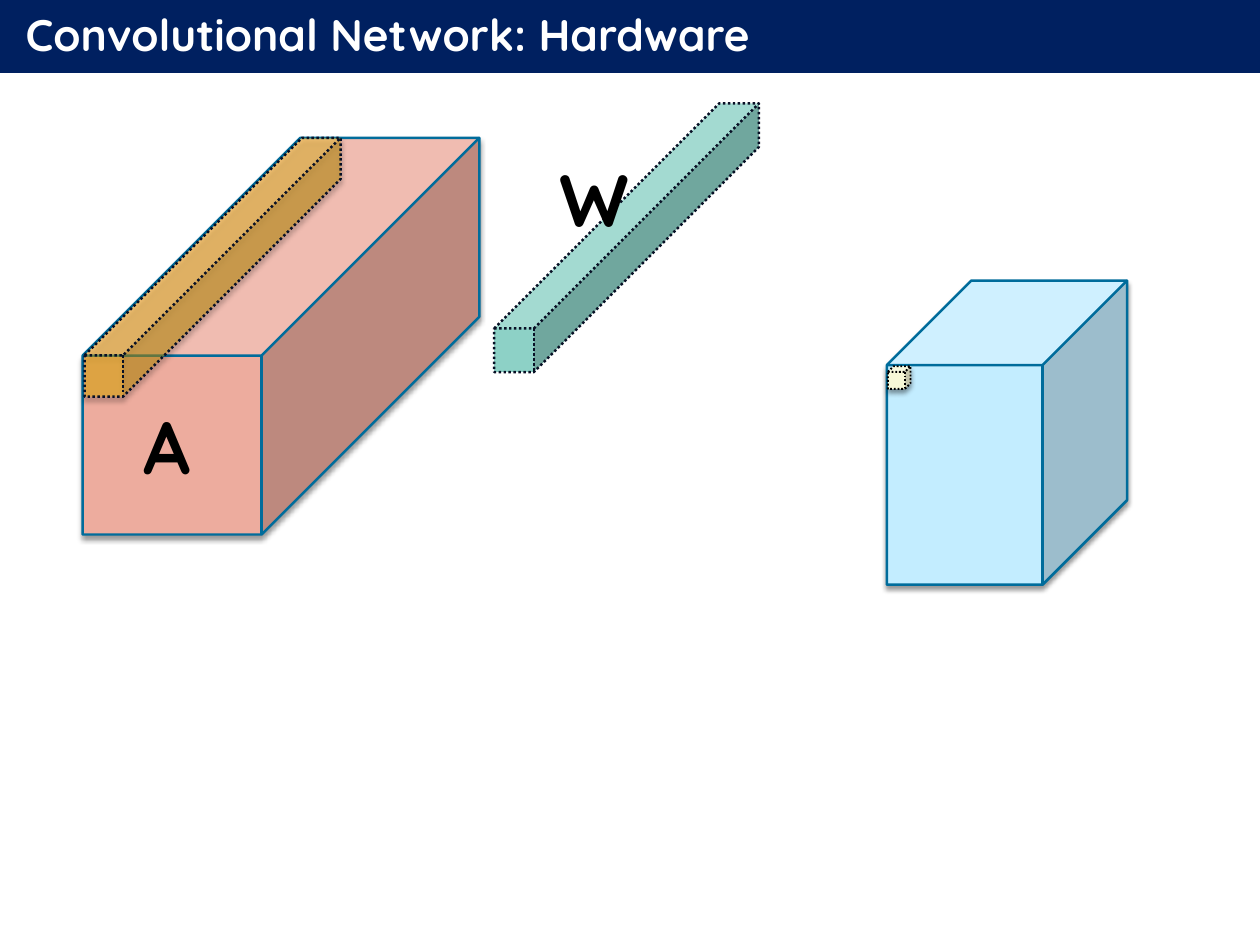
import lxml.etree
import pptx
import pptx.dml.color
import pptx.enum.dml
import pptx.enum.shapes
import pptx.enum.text
import pptx.oxml.ns
import pptx.util

RGB = pptx.dml.color.RGBColor
NAVY = RGB(0x00, 0x20, 0x60)
WHITE = RGB(0xFF, 0xFF, 0xFF)
BLACK = RGB(0x00, 0x00, 0x00)
SALMON = RGB(0xED, 0xAC, 0x9E)
SKY = RGB(0xC3, 0xED, 0xFF)
AMBER = RGB(0xFF, 0xC0, 0x00)
CREAM = RGB(0xF7, 0xF8, 0xD7)
TEAL = RGB(0x8D, 0xD1, 0xC6)
BLUE = RGB(0x00, 0x6C, 0x9B)
INK = RGB(0x08, 0x10, 0x25)

PX = 10160  # EMU per px, 90 px to the inch
SLIDE_SIZE = (1280, 960)
FONT = "Quicksand"

TITLE = "Convolutional Network: Hardware"
TITLE_BOX = (0, -5, 1280, 79)
TITLE_INDENT = 26

SOLID = pptx.enum.dml.MSO_LINE.SOLID
DOTTED = pptx.enum.dml.MSO_LINE.ROUND_DOT

# box, depth, fill, opacity in percent, line colour, line width, dash, shadow
CUBES = [
    ((84, 140, 403, 403), 0.549, SALMON, 100, BLUE, 2, SOLID, True),
    ((901, 285, 244, 309), 0.352, SKY, 100, BLUE, 2, SOLID, True),
    ((86, 140, 260, 263), 0.85, AMBER, 47, INK, 2, DOTTED, True),
    ((902, 372, 23, 23), 0.25, CREAM, 100, BLACK, 1.5, DOTTED, True),
    ((502, 105, 269, 273), 0.85, TEAL, 100, INK, 2, DOTTED, False),
]
LABELS = [
    ("A", (137, 403, 73, 100)),
    ("W", (560, 152, 90, 100)),
]


def emu(lengths):
    return [length * PX for length in lengths]


def add_child(parent, tag, **attributes):
    return lxml.etree.SubElement(parent, pptx.oxml.ns.qn(tag), attributes)


def write(para, text, size, color):
    span = para.add_run()
    span.text = text
    for name, value in {"name": FONT, "size": pptx.util.Pt(size), "bold": True}.items():
        setattr(span.font, name, value)
    span.font.color.rgb = color


def format_frame(frame, **values):
    for name, value in values.items():
        setattr(frame, name, value)


def add_title(page):
    title = page.shapes.title
    places = zip(("left", "top", "width", "height"), emu(TITLE_BOX))
    for name, value in places:
        setattr(title, name, value)
    title.fill.solid()
    title.fill.fore_color.rgb = NAVY
    format_frame(
        title.text_frame,
        margin_left=0, margin_top=0, margin_right=0, margin_bottom=0,
        word_wrap=True,
        auto_size=pptx.enum.text.MSO_AUTO_SIZE.NONE,
        vertical_anchor=pptx.enum.text.MSO_ANCHOR.MIDDLE,
    )
    para = title.text_frame.paragraphs[0]
    para.alignment = pptx.enum.text.PP_ALIGN.LEFT
    properties = para._p.get_or_add_pPr()
    properties.set("marL", str(TITLE_INDENT * PX))
    properties.set("indent", "0")
    write(para, TITLE, 36, WHITE)


def add_shadow(shape):
    effects = shape._element.spPr.find(pptx.oxml.ns.qn("a:effectLst"))
    shadow = add_child(
        effects, "a:outerShdw",
        blurRad=str(pptx.util.Pt(4)), dist=str(pptx.util.Pt(3)),
        dir="5400000", rotWithShape="0",
    )
    color = add_child(shadow, "a:srgbClr", val=str(BLACK))
    add_child(color, "a:alpha", val="40000")


def add_cube(page, box, depth, fill, opacity, line_color, line_width, dash, shadowed):
    cube = page.shapes.add_shape(pptx.enum.shapes.MSO_SHAPE.CUBE, *emu(box))
    cube.adjustments[0] = depth
    cube.fill.solid()
    cube.fill.fore_color.rgb = fill
    if opacity < 100:
        color = cube._element.spPr.find(".//" + pptx.oxml.ns.qn("a:srgbClr"))
        add_child(color, "a:alpha", val=str(opacity * 1000))
    cube.line.color.rgb = line_color
    cube.line.width = pptx.util.Pt(line_width)
    cube.line.dash_style = dash
    cube.shadow.inherit = False
    if shadowed:
        add_shadow(cube)


def add_label(page, text, box):
    label = page.shapes.add_textbox(*emu(box))
    format_frame(
        label.text_frame,
        word_wrap=False,
        auto_size=pptx.enum.text.MSO_AUTO_SIZE.SHAPE_TO_FIT_TEXT,
    )
    write(label.text_frame.paragraphs[0], text, 60, BLACK)


def main():
    deck = pptx.Presentation()
    deck.slide_width, deck.slide_height = emu(SLIDE_SIZE)
    page = deck.slides.add_slide(deck.slide_layouts.get_by_name("Title Only"))
    add_title(page)
    for cube in CUBES:
        add_cube(page, *cube)
    for text, box in LABELS:
        add_label(page, text, box)
    deck.save("out.pptx")


if __name__ == "__main__":
    main()
